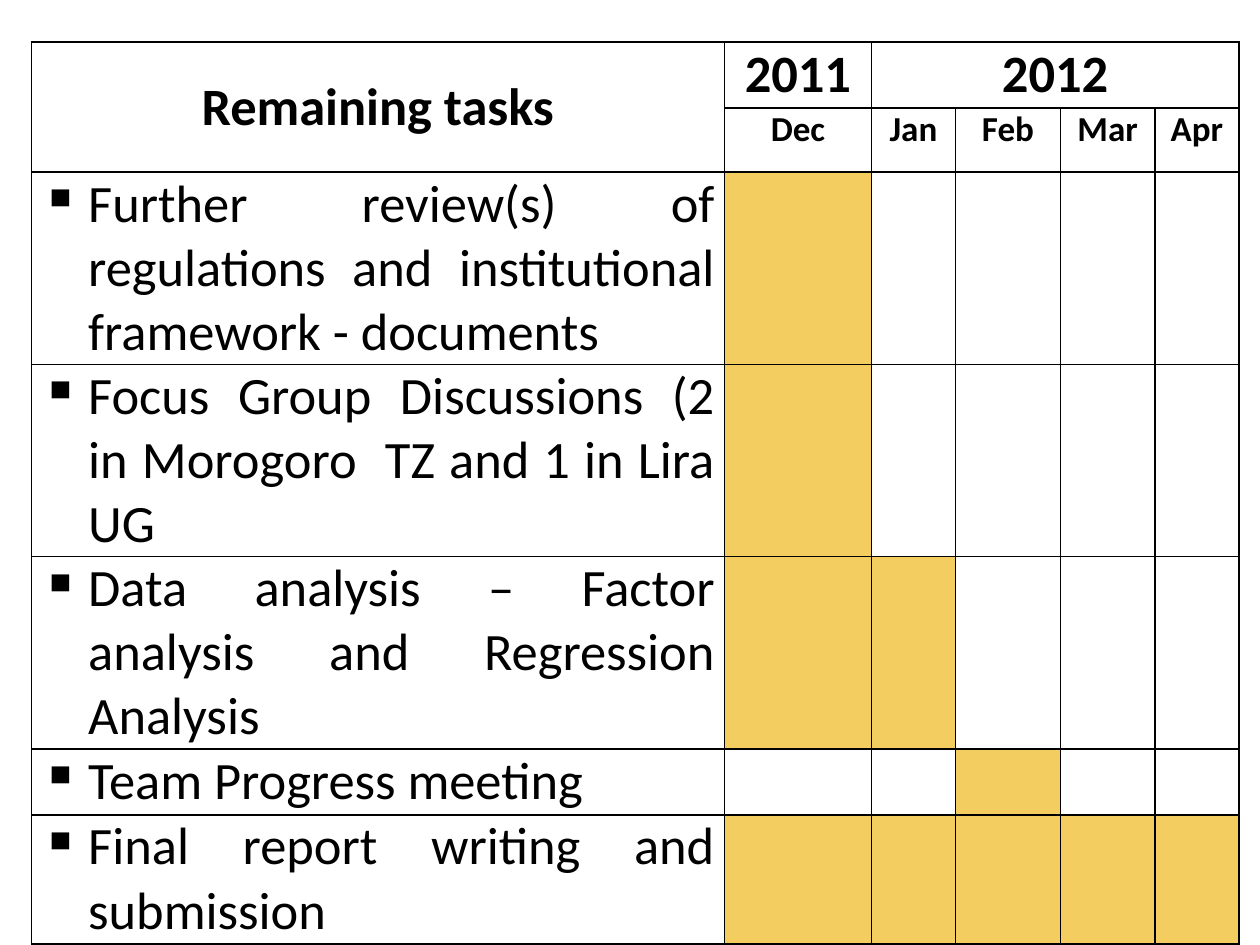
from dataclasses import dataclass

from lxml import etree
from pptx import Presentation
from pptx.dml.color import RGBColor
from pptx.enum.text import MSO_ANCHOR, PP_ALIGN
from pptx.oxml.ns import qn
from pptx.table import Table, _Cell
from pptx.util import Pt

CENTER = PP_ALIGN.CENTER
JUSTIFY = PP_ALIGN.JUSTIFY
TOP = MSO_ANCHOR.TOP
MIDDLE = MSO_ANCHOR.MIDDLE


@dataclass(frozen=True)
class Theme:
    font: str = "Calibri"
    text: RGBColor = RGBColor(0, 0, 0)
    border: RGBColor = RGBColor(0, 0, 0)
    scheduled: RGBColor = RGBColor(0xF3, 0xCD, 0x60)
    large: float = 30
    small: float = 20
    border_width: float = 1
    cell_margin: float = 5.4
    bullet_indent: float = 27


@dataclass(frozen=True)
class Task:
    name: str
    months: tuple[str, ...]
    height: float


THEME = Theme()
MONTHS = ("Dec", "Jan", "Feb", "Mar", "Apr")
TASKS = (
    Task("Further review(s) of regulations and institutional framework - documents",
         ("Dec",), 109.7),
    Task("Focus Group Discussions (2 in Morogoro  TZ and 1 in Lira UG", ("Dec",), 109.7),
    Task("Data analysis – Factor analysis and Regression Analysis", ("Dec", "Jan"), 109.7),
    Task("Team Progress meeting", ("Feb",), 37.7),
    Task("Final report writing and submission", MONTHS, 73.7),
)
COLUMN_WIDTHS = (396, 84, 48, 60, 54, 48)
HEADER_HEIGHTS = (37.7, 36)
TABLE_LEFT, TABLE_TOP = 18, 24


def write_text(cell: _Cell, text: str, *, size: float = THEME.large, bold: bool = False,
               align: PP_ALIGN = CENTER, anchor: MSO_ANCHOR = TOP,
               bullet: str = "") -> None:
    cell.vertical_anchor = anchor
    paragraph = cell.text_frame.paragraphs[0]
    paragraph.alignment = align
    run = paragraph.add_run()
    run.text = text
    run.font.name = THEME.font
    run.font.size = Pt(size)
    run.font.bold = bold
    run.font.color.rgb = THEME.text
    if bullet:
        properties = paragraph._p.get_or_add_pPr()
        indent = Pt(THEME.bullet_indent)
        properties.set("marL", str(indent))
        properties.set("indent", str(-indent))
        etree.SubElement(properties, qn("a:buChar")).set("char", bullet)


def add_borders(cell: _Cell) -> None:
    properties = cell._tc.get_or_add_tcPr()
    for side in ("lnL", "lnR", "lnT", "lnB"):
        line = etree.SubElement(properties, qn(f"a:{side}"))
        line.set("w", str(Pt(THEME.border_width)))
        fill = etree.SubElement(line, qn("a:solidFill"))
        etree.SubElement(fill, qn("a:srgbClr")).set("val", str(THEME.border))


def format_grid(table: Table) -> None:
    table.first_row = False
    table.horz_banding = False
    for column, width in zip(table.columns, COLUMN_WIDTHS):
        column.width = Pt(width)
    heights = (*HEADER_HEIGHTS, *(task.height for task in TASKS))
    for row, height in zip(table.rows, heights):
        row.height = Pt(height)
    for cell in table.iter_cells():
        cell.margin_left = cell.margin_right = Pt(THEME.cell_margin)
        cell.margin_top = cell.margin_bottom = Pt(0)
        add_borders(cell)
        cell.fill.background()


def fill_header(table: Table) -> None:
    table.cell(0, 0).merge(table.cell(1, 0))
    table.cell(0, 2).merge(table.cell(0, len(MONTHS)))
    write_text(table.cell(0, 0), "Remaining tasks", bold=True, anchor=MIDDLE)
    write_text(table.cell(0, 1), "2011", bold=True)
    write_text(table.cell(0, 2), "2012", bold=True)
    for column, month in enumerate(MONTHS, start=1):
        write_text(table.cell(1, column), month, size=THEME.small, bold=True)


def fill_task(table: Table, row: int, task: Task) -> None:
    write_text(table.cell(row, 0), task.name, align=JUSTIFY, bullet="▪")
    for month in task.months:
        cell = table.cell(row, MONTHS.index(month) + 1)
        cell.fill.solid()
        cell.fill.fore_color.rgb = THEME.scheduled


def main() -> None:
    presentation = Presentation()
    presentation.slide_width = Pt(720)
    presentation.slide_height = Pt(540)
    slide = presentation.slides.add_slide(presentation.slide_layouts[6])
    height = sum(HEADER_HEIGHTS) + sum(task.height for task in TASKS)
    table = slide.shapes.add_table(
        len(HEADER_HEIGHTS) + len(TASKS), len(COLUMN_WIDTHS),
        Pt(TABLE_LEFT), Pt(TABLE_TOP), Pt(sum(COLUMN_WIDTHS)), Pt(height)).table
    format_grid(table)
    fill_header(table)
    for row, task in enumerate(TASKS, start=len(HEADER_HEIGHTS)):
        fill_task(table, row, task)
    presentation.save("out.pptx")


if __name__ == "__main__":
    main()
